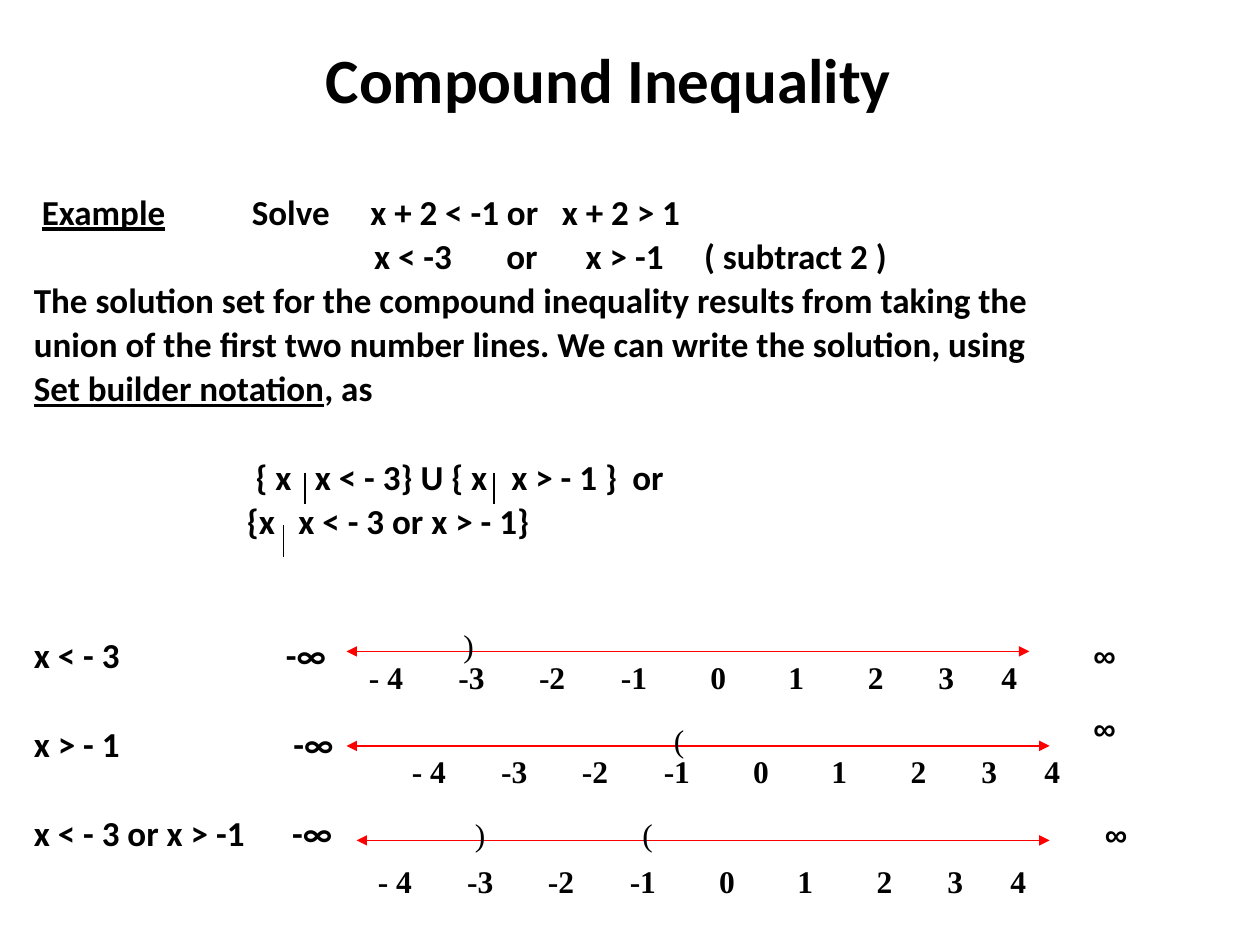
from typing import NamedTuple

import pptx
import pptx.dml.color
import pptx.enum.shapes
import pptx.enum.text
import pptx.oxml
import pptx.oxml.ns
import pptx.util

Inches = pptx.util.Inches
Pt = pptx.util.Pt
qn = pptx.oxml.ns.qn

BLACK = "000000"
RED = "FF0000"
LINE_GAP = 3.6
BLANK_LINE = 25.6


class Run(NamedTuple):
    text: str
    underline: bool = False


class Line(NamedTuple):
    runs: list[Run]
    tabs: tuple[float, ...] = ()
    before: float = LINE_GAP


class Font(NamedTuple):
    name: str
    size: int
    bold: bool = True


class NumberLine(NamedTuple):
    left: float
    right: float
    y: float
    labels: tuple[float, float]
    infinity: tuple[float, float]
    brackets: list[tuple[str, float]]


TITLE = Font("Calibri", 36)
BODY = Font("Calibri", 20)
LABEL = Font("Times New Roman", 18)
BRACKET = Font("Times New Roman", 18, False)
INFINITY = Font("Arial", 18)

BODY_LINES = [
    Line([Run(" "), Run("Example\t", True),
          Run("\tSolve\tx + 2 < -1 or\tx + 2 > 1")],
         (1.23, 1.73, 2.67, 4.19), 0),
    Line([Run("\tx < -3\tor\tx > -1\t( subtract 2 )")],
         (2.7, 3.75, 4.38, 5.32)),
    Line([Run("The solution set for the compound inequality results from taking the")]),
    Line([Run("union of the first two number lines. We can write the solution, using")]),
    Line([Run("Set builder notation", True), Run(", as")]),
    Line([Run("\t{ x\tx < - 3} U { x\tx > - 1 }\tor")],
         (1.76, 2.23, 3.79, 4.75), LINE_GAP + BLANK_LINE),
    Line([Run("\t{x\tx < - 3 or x > - 1}")], (1.69, 2.1)),
    Line([Run("x < - 3\t-∞")], (2.0,), LINE_GAP + 2 * BLANK_LINE),
    Line([Run("x > - 1\t-∞")], (2.06,), LINE_GAP + BLANK_LINE),
    Line([Run("x < - 3 or x > -1\t-∞")], (2.05,), LINE_GAP + BLANK_LINE),
]

TICKS = Line([Run("- 4\t-3\t-2\t-1\t0\t1\t2\t3\t4")],
             (0.71, 1.35, 2.0, 2.71, 3.33, 3.96, 4.52, 5.02), 0)

NUMBER_LINES = [
    NumberLine(2.75, 8.17, 5.17, (2.83, 5.17), (8.58, 5.0), [(")", 3.58)]),
    NumberLine(2.75, 8.33, 5.92, (3.17, 5.92), (8.58, 5.58), [("(", 5.25)]),
    NumberLine(2.83, 8.33, 6.67, (2.9, 6.79), (8.67, 6.42),
               [(")", 3.67), ("(", 5.0)]),
]

SET_BARS = [(2.42, 3.75), (3.92, 3.75), (2.25, 4.17)]


def rgb(color: str) -> pptx.dml.color.RGBColor:
    return pptx.dml.color.RGBColor.from_string(color)


def set_tabs(p, tabs: tuple[float, ...]) -> None:
    tab_list = pptx.oxml.parse_xml(
        '<a:tabLst xmlns:a="http://schemas.openxmlformats.org/drawingml/2006/main"/>')
    for pos in tabs:
        tab = tab_list.makeelement(qn("a:tab"), {"pos": str(Inches(pos)), "algn": "l"})
        tab_list.append(tab)
    p._p.get_or_add_pPr().append(tab_list)


def add_text(s, left: float, top: float, width: float, height: float,
             lines: list[Line], font: Font, spacing: float = 1.0):
    sp = s.shapes.add_textbox(Inches(left), Inches(top), Inches(width), Inches(height))
    tf = sp.text_frame
    tf.word_wrap = True
    for i, line in enumerate(lines):
        p = tf.add_paragraph() if i else tf.paragraphs[0]
        p.line_spacing = spacing
        p.space_before = Pt(line.before)
        if line.tabs:
            set_tabs(p, line.tabs)
        for run in line.runs:
            r = p.add_run()
            r.text = run.text
            r.font.name = font.name
            r.font.size = Pt(font.size)
            r.font.bold = font.bold
            r.font.underline = run.underline
            r.font.color.rgb = rgb(BLACK)
    return tf


def add_symbol(s, text: str, left: float, top: float, width: float, font: Font) -> None:
    add_text(s, left, top, width, 0.4, [Line([Run(text)], before=0)], font)


def add_line(s, x1: float, y1: float, x2: float, y2: float,
             color: str, arrows: bool = False) -> None:
    sp = s.shapes.add_connector(pptx.enum.shapes.MSO_CONNECTOR.STRAIGHT,
                                Inches(x1), Inches(y1), Inches(x2), Inches(y2))
    sp.line.color.rgb = rgb(color)
    sp.line.width = Pt(0.75)
    if arrows:
        ln = sp.line._get_or_add_ln()
        for end in ("a:headEnd", "a:tailEnd"):
            ln.append(ln.makeelement(qn(end), {"type": "triangle"}))
    props = sp._element.spPr
    props.append(props.makeelement(qn("a:effectLst"), {}))


def add_number_line(s, line: NumberLine) -> None:
    add_line(s, line.left, line.y, line.right, line.y, RED, True)
    add_text(s, *line.labels, 5.83, 0.4, [TICKS], LABEL)
    for bracket, left in line.brackets:
        add_symbol(s, bracket, left, line.y - 0.25, 0.28, BRACKET)
    add_symbol(s, "∞", *line.infinity, 0.38, INFINITY)


def main() -> None:
    prs = pptx.Presentation()
    prs.slide_width = Inches(10)
    prs.slide_height = Inches(7.5)
    s = prs.slides.add_slide(prs.slide_layouts[6])

    tf = add_text(s, 0.58, 0, 8.5, 1.25,
                  [Line([Run("Compound Inequality")], before=0)], TITLE)
    tf.vertical_anchor = pptx.enum.text.MSO_ANCHOR.MIDDLE
    tf.paragraphs[0].alignment = pptx.enum.text.PP_ALIGN.CENTER

    add_text(s, 0.17, 1.5, 8.92, 5.9, BODY_LINES, BODY, 0.9)
    for x, y in SET_BARS:
        add_line(s, x, y, x, y + 0.25, BLACK)
    for line in NUMBER_LINES:
        add_number_line(s, line)

    prs.save("out.pptx")


if __name__ == "__main__":
    main()
